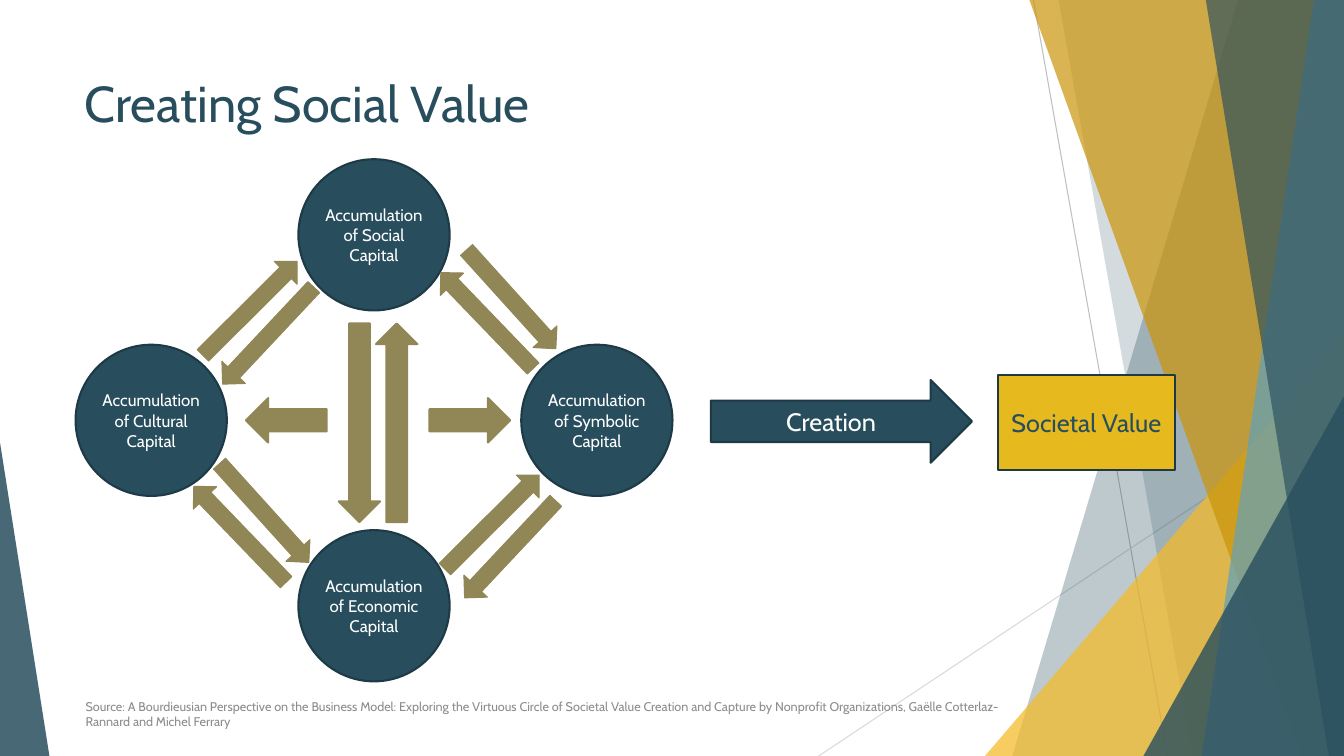
from lxml import etree
from pptx import Presentation
from pptx.dml.color import RGBColor
from pptx.enum.shapes import MSO_CONNECTOR, MSO_SHAPE
from pptx.enum.text import MSO_ANCHOR, PP_ALIGN
from pptx.oxml.ns import qn
from pptx.util import Inches, Pt

TEAL, NAVY, OLIVE, GOLD = "284E5E", "1E3A46", "918655", "E6B91E"


def paint(shape, fill, line=None, width=1.5, opacity=100):
    shape.shadow.inherit = False
    shape.fill.solid()
    shape.fill.fore_color.rgb = RGBColor.from_string(fill)
    if opacity < 100:
        color = shape.fill._xPr.find(qn("a:solidFill"))[0]
        etree.SubElement(color, qn("a:alpha"), val=str(opacity * 1000))
    if line:
        shape.line.color.rgb = RGBColor.from_string(line)
        shape.line.width = Pt(width)
    else:
        shape.line.fill.background()


def write(shape, words, size, color, align=PP_ALIGN.CENTER, anchor=MSO_ANCHOR.MIDDLE):
    frame = shape.text_frame
    frame.word_wrap = True
    frame.vertical_anchor = anchor
    frame.text = words
    paragraph = frame.paragraphs[0]
    paragraph.alignment = align
    paragraph.font.name = "Cabin"
    paragraph.font.size = Pt(size)
    paragraph.font.color.rgb = RGBColor.from_string(color)


deck = Presentation()
deck.slide_width, deck.slide_height = Inches(13.33), Inches(7.5)
slide = deck.slides.add_slide(deck.slide_layouts[5])
shapes = slide.shapes

# Backdrop: hairlines, then translucent bands and triangles from back to front
for x1, y1, x2, y2, color in [
    (10.25, 0, 11.58, 7.5, "BFBFBF"),
    (13.33, 4.03, 8.12, 7.5, "D9D9D9"),
]:
    hairline = shapes.add_connector(
        MSO_CONNECTOR.STRAIGHT, Inches(x1), Inches(y1), Inches(x2), Inches(y2))
    hairline.line.color.rgb = RGBColor.from_string(color)
    hairline.line.width = Pt(0.75)
    etree.SubElement(hairline._element.spPr, qn("a:effectLst"))

# A band is its left edge at the top and at the bottom; a triangle is
# left, top, width, height and the place of its tip
backdrop = [
    ("band", (12.28, 10.04), TEAL, 30),
    ("band", (10.5, 11.83), TEAL, 20),
    ("triangle", (9.77, 3.33, 3.56, 4.17, 1), "F5BA26", 72),
    ("band", (10.21, 12.91), "CB9409", 70),
    ("band", (13.03, 11.92), "61A1BC", 70),
    ("band", (11.96, 13.18), TEAL, 65),
    ("triangle", (11.34, 3.93, 1.99, 3.57, 1), TEAL, 80),
    ("triangle", (0, 4.39, 0.49, 3.11, 0), TEAL, 85),
]
for kind, geometry, color, opacity in backdrop:
    if kind == "band":
        top_x, bottom_x = geometry
        outline = shapes.build_freeform(Inches(top_x), 0)
        outline.add_line_segments([
            (Inches(13.33), 0), (Inches(13.33), Inches(7.5)), (Inches(bottom_x), Inches(7.5))])
        facet = outline.convert_to_shape()
    else:
        *box, tip = geometry
        facet = shapes.add_shape(MSO_SHAPE.ISOSCELES_TRIANGLE, *map(Inches, box))
        facet.adjustments[0] = tip
    paint(facet, color, opacity=opacity)

# The four kinds of capital
for kind, left, top in [
    ("Social", 2.96, 1.58),
    ("Economic", 2.96, 5.26),
    ("Symbolic", 5.17, 3.42),
    ("Cultural", 0.75, 3.42),
]:
    capital = shapes.add_shape(
        MSO_SHAPE.FLOWCHART_CONNECTOR, Inches(left), Inches(top), Inches(1.5), Inches(1.5))
    paint(capital, TEAL, NAVY)
    capital.text_frame.margin_left = capital.text_frame.margin_right = 0
    write(capital, f"Accumulation of {kind} Capital", 12, "FFFFFF")

# Outcome
societal_value = shapes.add_shape(
    MSO_SHAPE.RECTANGLE, Inches(9.9), Inches(3.72), Inches(1.75), Inches(0.94))
paint(societal_value, GOLD, NAVY)
write(societal_value, "Societal Value", 18, TEAL)

creation = shapes.add_shape(
    MSO_SHAPE.RIGHT_ARROW, Inches(7.05), Inches(3.77), Inches(2.59), Inches(0.82))
paint(creation, TEAL, NAVY)
write(creation, "Creation", 18, "FFFFFF")

# Straight exchanges in the middle
for direction, *box in [
    (MSO_SHAPE.DOWN_ARROW, 3.36, 3.21, 0.41, 1.97),
    (MSO_SHAPE.UP_ARROW, 3.73, 3.21, 0.41, 1.97),
    (MSO_SHAPE.RIGHT_ARROW, 4.26, 3.95, 0.8, 0.44),
    (MSO_SHAPE.LEFT_ARROW, 2.44, 3.95, 0.8, 0.44),
]:
    exchange = shapes.add_shape(direction, *map(Inches, box))
    paint(exchange, OLIVE, OLIVE)

# Diagonal exchanges: each arrow appears again on the opposite side
for left, top, angle, shift_x, shift_y in [
    (2.32, 2.4, 45.1, 2.4, 2.12),
    (2.5, 2.67, 223.2, 2.4, 2.12),
    (2.46, 4.43, 137.9, 2.45, -2.12),
    (2.22, 4.64, 316.1, 2.45, -2.12),
]:
    for side in range(2):
        diagonal = shapes.add_shape(
            MSO_SHAPE.UP_ARROW, Inches(left + side * shift_x), Inches(top + side * shift_y),
            Inches(0.32), Inches(1.32))
        diagonal.rotation = angle
        paint(diagonal, OLIVE, OLIVE, 0.75)

# Title and source
title = shapes.title
title.left, title.top, title.width, title.height = map(Inches, (0.74, 0.67, 9.4, 1.44))
write(title, "Creating Social Value", 36, TEAL, PP_ALIGN.LEFT, MSO_ANCHOR.TOP)

source = shapes.add_textbox(Inches(0.75), Inches(6.88), Inches(9.39), Inches(0.4))
write(source, "Source: A Bourdieusian Perspective on the Business Model: Exploring the Virtuous "
      "Circle of Societal Value Creation and Capture by Nonprofit Organizations, "
      "Gaëlle Cotterlaz-Rannard and Michel Ferrary", 9, "8C8C8C", PP_ALIGN.LEFT)

deck.save("out.pptx")
